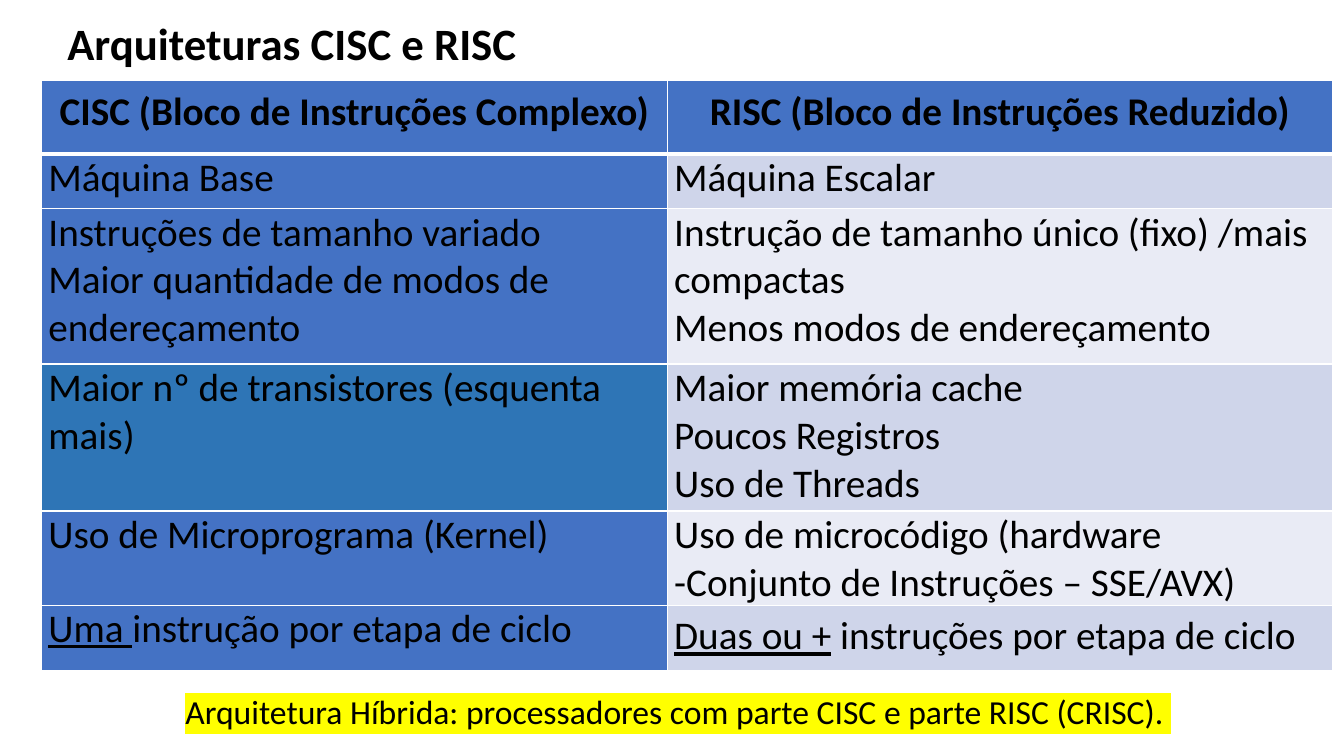
import pptx
import pptx.util
import pptx.dml.color
import pptx.enum.text
import pptx.oxml

Pt = pptx.util.Pt
ALIGN = pptx.enum.text.PP_ALIGN
ANCHOR = pptx.enum.text.MSO_ANCHOR
NAMESPACE = 'xmlns:a="http://schemas.openxmlformats.org/drawingml/2006/main"'


def paint(fill, color):
    fill.solid()
    fill.fore_color.rgb = pptx.dml.color.RGBColor.from_string(color)


def write(para, text, size=28, bold=False, underline=False, align=ALIGN.LEFT, spacing=1.0):
    """Add a run to the paragraph, set the paragraph's format and return the run."""
    para.alignment = align
    para.line_spacing = spacing
    span = para.add_run()
    span.text = text
    span.font.name = "Calibri"
    span.font.size = Pt(size)
    span.font.bold = bold
    span.font.underline = underline
    paint(span.font.fill, "000000")
    return span


deck = pptx.Presentation()
deck.slide_width, deck.slide_height = Pt(960), Pt(540)
page = deck.slides.add_slide(deck.slide_layouts[6])

title = page.shapes.add_textbox(Pt(41), Pt(8.6), Pt(828), Pt(49)).text_frame
title.word_wrap = True
title.vertical_anchor = ANCHOR.MIDDLE
write(title.paragraphs[0], "Arquiteturas CISC e RISC", size=32, bold=True, spacing=0.9)

# Each cell is a list of paragraphs; "|" ends the underlined start of a paragraph.
comparison = [
    (["CISC (Bloco de Instruções Complexo)"], ["RISC (Bloco de Instruções Reduzido)"]),
    (["Máquina Base"], ["Máquina Escalar"]),
    (["Instruções de tamanho variado", "Maior quantidade de modos de endereçamento"],
     ["Instrução de tamanho único (fixo) /mais compactas", "Menos modos de endereçamento"]),
    (["Maior nº de transistores (esquenta mais)"],
     ["Maior memória cache", "Poucos Registros", "Uso de Threads"]),
    (["Uso de Microprograma (Kernel)"],
     ["Uso de microcódigo (hardware -Conjunto de Instruções – SSE/AVX)"]),
    (["Uma |instrução por etapa de ciclo"], ["Duas ou +| instruções por etapa de ciclo"]),
]
row_heights = [52.5, 39, 111, 105, 48, 47]
column_widths = [447, 475]
last_row = len(comparison) - 1

table = page.shapes.add_table(len(comparison), 2, Pt(29.6), Pt(57.6),
                              Pt(sum(column_widths)), Pt(sum(row_heights))).table
for column, width in zip(table.columns, column_widths):
    column.width = Pt(width)

for row, (contents, height) in enumerate(zip(comparison, row_heights)):
    table.rows[row].height = Pt(height)
    band = "CFD5EA" if row % 2 else "E9EBF5"
    fills = ["2E75B6" if row == 3 else "4472C4", "4472C4" if row == 0 else band]
    for col, lines in enumerate(contents):
        cell = table.cell(row, col)
        cell.margin_left = cell.margin_right = Pt(5)
        cell.margin_top = cell.margin_bottom = 0
        paint(cell.fill, fills[col])
        border_widths = {"L": 1, "R": 1, "T": 3 if row == 1 else 1, "B": 3 if row == 0 else 1}
        for position, (side, width) in enumerate(border_widths.items()):
            border = pptx.oxml.parse_xml(
                f'<a:ln{side} {NAMESPACE} w="{Pt(width)}"><a:solidFill>'
                f'<a:srgbClr val="FFFFFF"/></a:solidFill></a:ln{side}>')
            cell._tc.tcPr.insert(position, border)
        header = row == 0
        look = {"bold": header, "align": ALIGN.CENTER if header else ALIGN.LEFT,
                "spacing": 1.15 if header or (row, col) == (last_row, 1) else 1.0}
        for index, line in enumerate(lines):
            frame = cell.text_frame
            para = frame.add_paragraph() if index else frame.paragraphs[0]
            start, mark, rest = line.partition("|")
            write(para, start, underline=bool(mark), **look)
            if rest:
                write(para, rest, **look)

note = page.shapes.add_textbox(Pt(44.6), Pt(490.3), Pt(880), Pt(36)).text_frame
note.word_wrap = True
span = write(note.paragraphs[0],
             "Arquitetura Híbrida: processadores com parte CISC e parte RISC (CRISC). ",
             size=24, align=ALIGN.CENTER)
highlight = pptx.oxml.parse_xml(
    f'<a:highlight {NAMESPACE}><a:srgbClr val="FFFF00"/></a:highlight>')
span.font._element.find(pptx.oxml.ns.qn("a:solidFill")).addnext(highlight)

deck.save("out.pptx")
